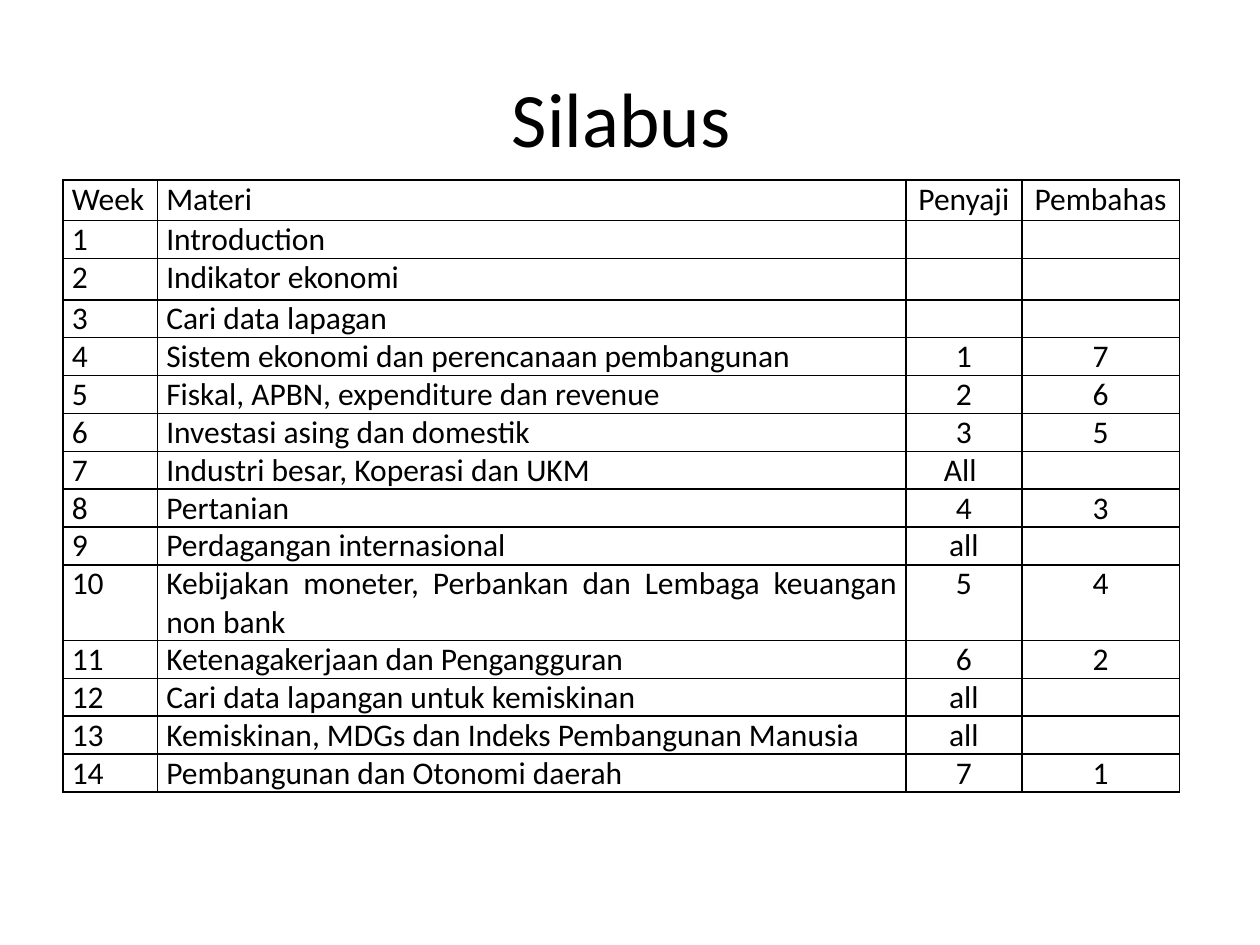
"""Build the syllabus slide: a title above a bordered weekly schedule."""
from dataclasses import dataclass

from lxml import etree
from pptx import Presentation
from pptx.dml.color import RGBColor
from pptx.enum import text
from pptx.oxml import ns
from pptx.util import Inches, Pt


@dataclass
class Theme:
    font: str = "Calibri"
    ink: str = "000000"
    title_size: int = 44
    body_size: int = 18
    border: int = 1


theme = Theme()
align = text.PP_ALIGN
schedule = [
    ("Week", "Materi", "Penyaji", "Pembahas"),
    ("1", "Introduction ", "", ""),
    ("2", "Indikator ekonomi", "", ""),
    ("3", "Cari data lapagan", "", ""),
    ("4", "Sistem ekonomi dan perencanaan pembangunan", "1", "7"),
    ("5", "Fiskal, APBN, expenditure dan revenue", "2", "6"),
    ("6", "Investasi asing dan domestik", "3", "5"),
    ("7", "Industri besar, Koperasi dan UKM", "All ", ""),
    ("8", "Pertanian", "4", "3"),
    ("9", "Perdagangan internasional", "all", ""),
    ("10", "Kebijakan moneter, Perbankan dan Lembaga keuangan non bank", "5", "4"),
    ("11", "Ketenagakerjaan dan Pengangguran", "6", "2"),
    ("12", "Cari data lapangan untuk kemiskinan", "all", ""),
    ("13", "Kemiskinan, MDGs dan Indeks Pembangunan Manusia", "all", ""),
    ("14", "Pembangunan dan Otonomi daerah", "7", "1"),
]
column_widths = [0.75, 5.94, 0.92, 1.25]
column_alignments = [align.JUSTIFY, align.JUSTIFY, align.CENTER, align.CENTER]
row_height = 0.25
special_heights = {0: 0.32, 1: 0.24, 2: 0.33, 3: 0.28, 14: 0.28}


def write(para, words, size, alignment):
    para.text = words
    para.alignment = alignment
    para.font.name = theme.font
    para.font.size = Pt(size)
    para.font.color.rgb = RGBColor.from_string(theme.ink)


def add_borders(cell):
    properties = cell._tc.get_or_add_tcPr()
    for side in ("lnL", "lnR", "lnT", "lnB"):
        line = etree.SubElement(properties, ns.qn(f"a:{side}"), w=str(Pt(theme.border)))
        fill = etree.SubElement(line, ns.qn("a:solidFill"))
        etree.SubElement(fill, ns.qn("a:srgbClr"), val=theme.ink)


deck = Presentation()
deck.slide_width, deck.slide_height = Inches(10), Inches(7.5)
page = deck.slides.add_slide(deck.slide_layouts[6])
margin = deck.slide_width // 20

title = page.shapes.add_textbox(
    margin, deck.slide_height // 25, deck.slide_width - 2 * margin, deck.slide_height // 6)
title.text_frame.word_wrap = True
title.text_frame.vertical_anchor = text.MSO_ANCHOR.MIDDLE
write(title.text_frame.paragraphs[0], "Silabus ", theme.title_size, align.CENTER)

frame = page.shapes.add_table(
    len(schedule), len(column_widths), margin, Inches(1.43),
    Inches(sum(column_widths)), Inches(4.85))
table = frame.table
table.first_row = table.horz_banding = False
for column, width in zip(table.columns, column_widths):
    column.width = Inches(width)

for index, entries in enumerate(schedule):
    table.rows[index].height = Inches(special_heights.get(index, row_height))
    for column, words in enumerate(entries):
        cell = table.cell(index, column)
        cell.margin_left = cell.margin_right = Inches(0.07)
        cell.margin_top = cell.margin_bottom = 0
        add_borders(cell)
        cell.fill.background()
        write(cell.text_frame.paragraphs[0], words, theme.body_size, column_alignments[column])

deck.save("out.pptx")
